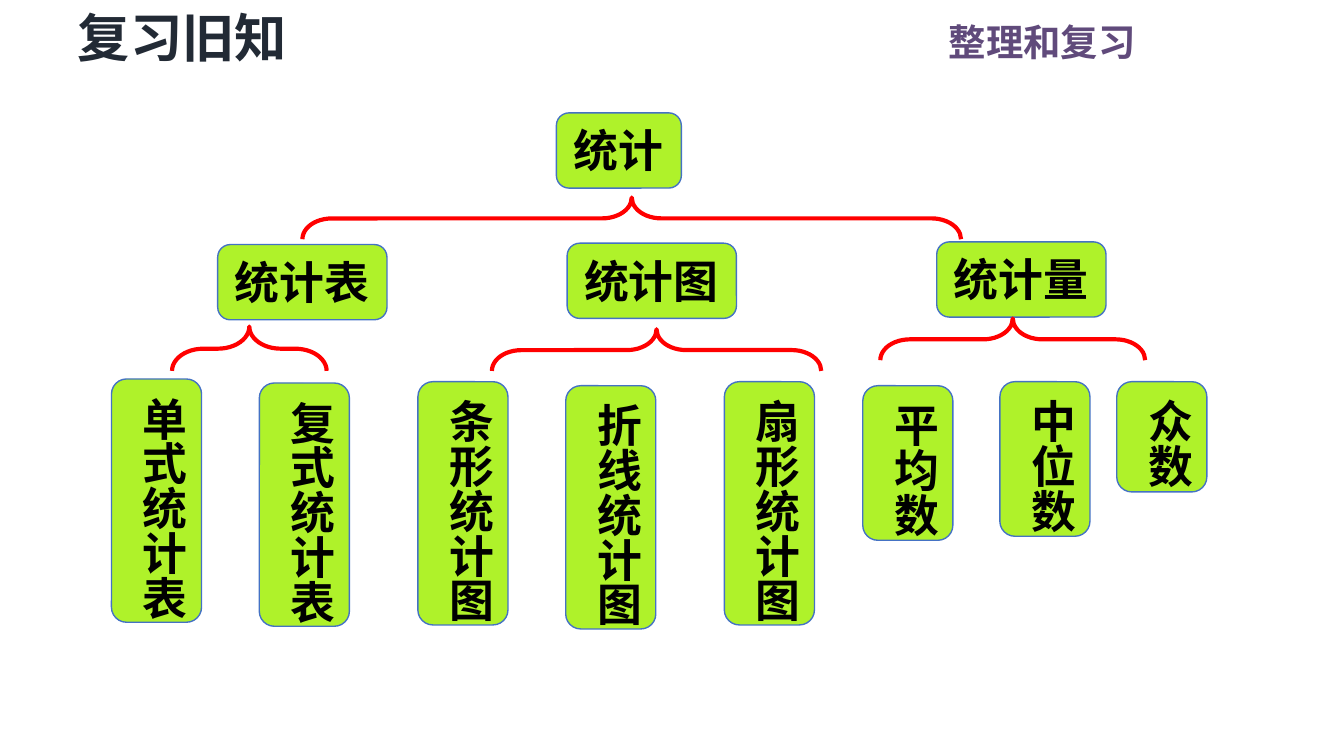
from lxml.etree import SubElement
from pptx import Presentation
from pptx.dml.color import RGBColor
from pptx.enum.shapes import MSO_SHAPE
from pptx.enum.text import MSO_ANCHOR, MSO_AUTO_SIZE, PP_ALIGN
from pptx.oxml.ns import qn
from pptx.util import Inches, Pt

FONT = "Noto Sans CJK SC"
COLORS = {
    "title": "222A35",
    "topic": "604A7B",
    "text": "000000",
    "node": "AFF22A",
    "edge": "4472C4",
    "brace": "FF0000",
}
CHAR = 0.33


def color(name):
    return RGBColor.from_string(COLORS[name])


def write(shape, text, size=24, ink="text", align=PP_ALIGN.LEFT,
          wrap=True, pad=(0.1, 0.05), upright=False):
    frame = shape.text_frame
    frame.word_wrap = wrap
    frame.auto_size = MSO_AUTO_SIZE.SHAPE_TO_FIT_TEXT
    frame.vertical_anchor = MSO_ANCHOR.TOP
    frame.margin_left = frame.margin_right = Inches(pad[0])
    frame.margin_top = frame.margin_bottom = Inches(pad[1])
    if upright:
        shape.element.txBody.bodyPr.set("vert", "eaVert")
    para = frame.paragraphs[0]
    para.alignment = align
    run = para.add_run()
    run.text = text
    font = run.font
    font.name = FONT
    font.size = Pt(size)
    font.bold = True
    font.color.rgb = color(ink)
    SubElement(run._r.get_or_add_rPr(), qn("a:ea"), typeface=FONT)


def add_node(slide, left, top, text, upright=False):
    size = len(text) * CHAR
    width, height = (0.67, size + 0.16) if upright else (size + 0.27, 0.56)
    node = slide.shapes.add_shape(
        MSO_SHAPE.ROUNDED_RECTANGLE,
        Inches(left), Inches(top), Inches(width), Inches(height))
    node.shadow.inherit = False
    node.fill.solid()
    node.fill.fore_color.rgb = color("node")
    node.line.color.rgb = color("edge")
    node.line.width = Pt(0.75)
    write(node, text, wrap=False, upright=upright)


def add_brace(slide, left, top, span, depth=0.31):
    mid_x, mid_y = left + span / 2, top + depth / 2
    brace = slide.shapes.add_shape(
        MSO_SHAPE.LEFT_BRACE,
        Inches(mid_x - depth / 2), Inches(mid_y - span / 2),
        Inches(depth), Inches(span))
    brace.rotation = 90
    brace.adjustments[0] = 0.71
    brace.adjustments[1] = 0.5
    brace.shadow.inherit = False
    brace.fill.background()
    brace.line.color.rgb = color("brace")
    brace.line.width = Pt(2.25)


def add_header(slide, left, top, width):
    title = slide.shapes.title
    title.left, title.top = Inches(left), Inches(top)
    title.width, title.height = Inches(2.02), Inches(0.55)
    write(title, "复习旧知", size=28, ink="title", pad=(0.07, 0.04))
    topic = slide.shapes.add_textbox(
        Inches(left + width - 2.76), Inches(top + 0.09),
        Inches(2.76), Inches(0.44))
    write(topic, "整理和复习", size=20, ink="topic", align=PP_ALIGN.RIGHT)


def add_root(slide, left, top):
    add_node(slide, left + 1.89, top, "统计")
    add_brace(slide, left, top + 0.63, 4.9)


def add_branch(slide, left, top, name, shift, brace, leaves):
    add_node(slide, left + shift, top, name)
    x, y, *size = brace
    add_brace(slide, left + x, top + y, *size)
    for x, y, text in leaves:
        add_node(slide, left + x, top + y, text, upright=True)


BRANCHES = [
    (0.83, 1.82, "统计表", 0.79, (0.45, 0.61, 1.15, 0.33),
     [(0, 1, "单式统计表"), (1.1, 1.03, "复式统计表")]),
    (3.11, 1.81, "统计图", 1.11, (0.55, 0.64, 2.45),
     [(0, 1.03, "条形统计图"), (1.1, 1.06, "折线统计图"),
      (2.28, 1.03, "扇形统计图")]),
    (6.42, 1.8, "统计量", 0.55, (0.13, 0.57, 1.97),
     [(0, 1.07, "平均数"), (1.02, 1.04, "中位数"), (1.89, 1.04, "众数")]),
]


def main():
    deck = Presentation()
    deck.slide_width = Inches(10)
    deck.slide_height = deck.slide_width * 9 // 16
    slide = deck.slides.add_slide(deck.slide_layouts[5])
    add_header(slide, 0.51, 0, 8.04)
    add_root(slide, 2.25, 0.84)
    for branch in BRANCHES:
        add_branch(slide, *branch)
    deck.save("out.pptx")


if __name__ == "__main__":
    main()
